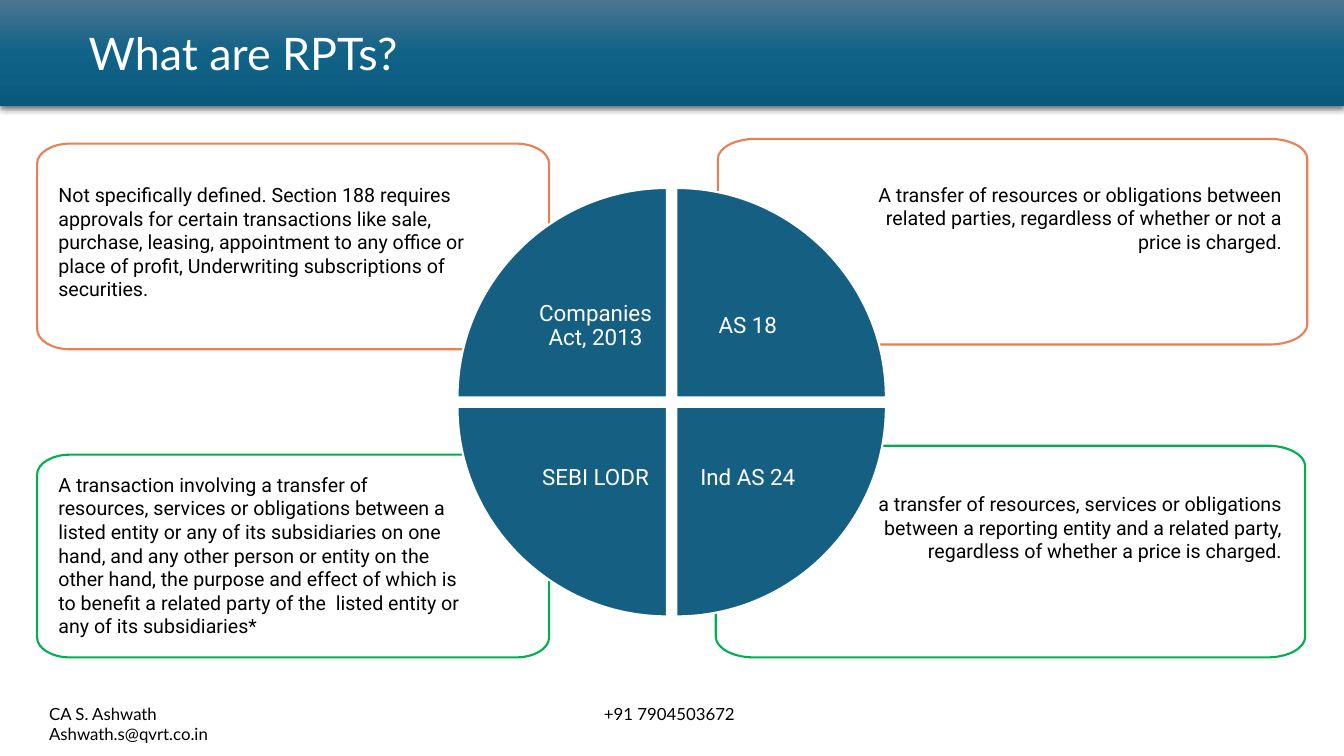
from copy import deepcopy
from math import cos, radians, sin

from lxml.etree import SubElement
from pptx import Presentation
from pptx.dml.color import RGBColor
from pptx.enum.shapes import MSO_SHAPE
from pptx.enum.text import MSO_ANCHOR as Anchor, PP_ALIGN as Align
from pptx.oxml.ns import qn
from pptx.util import Pt

WHITE = RGBColor(0xFF, 0xFF, 0xFF)
BLACK = RGBColor(0x00, 0x00, 0x00)
BLUE = RGBColor(0x15, 0x60, 0x82)
ORANGE = RGBColor(0xE9, 0x7F, 0x54)
GREEN = RGBColor(0x00, 0xB0, 0x50)
HEADER_STOPS = [
    (0, RGBColor(0x4C, 0x75, 0x91)),
    (0.5, RGBColor(0x10, 0x62, 0x87)),
    (1, RGBColor(0x09, 0x59, 0x7D)),
]
ARC_PULL = 0.55  # control point distance of a quarter arc, in radii

prs = Presentation()
prs.slide_width, prs.slide_height = Pt(960), Pt(540)
slide = prs.slides.add_slide(prs.slide_layouts[6])
shapes = slide.shapes


def write(shape, text, size=14, font="Roboto", color=BLACK, align=Align.LEFT,
          anchor=Anchor.TOP, insets=(7.2, 3.6, 7.2, 3.6), spacing=1.0):
    """Fill a shape with one paragraph per line; insets run left, top, right, bottom."""
    frame = shape.text_frame
    frame.word_wrap = True
    frame.vertical_anchor = anchor
    (frame.margin_left, frame.margin_top,
     frame.margin_right, frame.margin_bottom) = map(Pt, insets)
    frame.text = text
    for paragraph in frame.paragraphs:
        paragraph.alignment = align
        paragraph.line_spacing = spacing
        style = paragraph.runs[0].font
        style.size, style.name, style.color.rgb = Pt(size), font, color
    return frame


def draw_outline(arcs, fill, line, tip=None):
    """Join clockwise quarter arcs (centre x, y, radius x, y, start angle), then a tip."""
    points = []
    for x, y, rx, ry, start in arcs:
        c, s = cos(radians(start)), sin(radians(start))
        for u, v in [(c, s), (c - ARC_PULL * s, s + ARC_PULL * c),
                     (ARC_PULL * c - s, ARC_PULL * s + c), (-s, c)]:
            points.append((Pt(x + rx * u), Pt(y + ry * v)))
    if tip:
        points.append((Pt(tip[0]), Pt(tip[1])))
    builder = shapes.build_freeform(*points[0])
    builder.add_line_segments(points[1:], close=True)
    outline = builder.convert_to_shape()
    # The last three points of each arc become one Bezier segment.
    steps = list(outline._element.spPr.find(".//" + qn("a:pathLst"))[0])
    for first in range(1, 4 * len(arcs), 4):
        curve = steps[first].makeelement(qn("a:cubicBezTo"))
        steps[first].addprevious(curve)
        for step in steps[first:first + 3]:
            curve.append(step[0])
            step.getparent().remove(step)
    outline.shadow.inherit = False
    outline.fill.solid()
    outline.fill.fore_color.rgb = fill
    outline.line.color.rgb = line
    outline.line.width = Pt(1.5)
    return outline


# Header band
header = shapes.add_shape(MSO_SHAPE.RECTANGLE, 0, 0, Pt(960), Pt(75.6))
header.line.fill.background()
header.fill.gradient()
header.fill.gradient_angle = 270
stop_list = header._element.spPr.find(".//" + qn("a:gsLst"))
stop_list.append(deepcopy(stop_list[0]))
for stop, (position, color) in zip(header.fill.gradient_stops, HEADER_STOPS):
    stop.position, stop.color.rgb = position, color
header.shadow.inherit = False
shadow = SubElement(header._element.spPr.find(qn("a:effectLst")), qn("a:outerShdw"),
                    blurRad=str(Pt(4.5)), dist=str(Pt(1.5)), dir="5400000",
                    algn="t", rotWithShape="0")
shadow_color = SubElement(shadow, qn("a:srgbClr"), val="000000")
SubElement(shadow_color, qn("a:alpha"), val="63000")
title = write(header, "What are RPTs?", size=32, font="Lato", color=WHITE,
              align=Align.JUSTIFY, anchor=Anchor.MIDDLE)
title_format = title.paragraphs[0]._p.get_or_add_pPr()
title_format.set("marL", str(Pt(56.2)))
title_format.set("indent", "0")

# Contact line
contact = shapes.add_textbox(Pt(28), Pt(499), Pt(904), Pt(21.8))
contact_text = write(contact, "CA S. Ashwath\t+91 7904503672\nAshwath.s@qvrt.co.in",
                     size=12, font="Lato")
tab_stops = SubElement(contact_text.paragraphs[0]._p.get_or_add_pPr(), qn("a:tabLst"))
SubElement(tab_stops, qn("a:tab"), pos=str(Pt(396.3)), algn="l")

# Definition frames
for left, top, width, height, color in [
    (511.3, 318.4, 421, 151.2, GREEN),
    (26.5, 324.8, 365.7, 144.8, GREEN),
    (512.8, 99.2, 421, 146.9, ORANGE),
    (26.5, 102.6, 365.7, 146.9, ORANGE),
]:
    rx, ry = width * 0.064, height * 0.098
    west, east = left + rx, left + width - rx
    north, south = top + ry, top + height - ry
    frame = draw_outline([(west, north, rx, ry, 180), (east, north, rx, ry, 270),
                          (east, south, rx, ry, 0), (west, south, rx, ry, 90)],
                         WHITE, color)
    frame_color = frame._element.spPr.find(qn("a:solidFill"))[0]
    SubElement(frame_color, qn("a:alpha"), val="90000")

# Wheel of four quarters, clockwise from the upper left
CENTER_X, CENTER_Y, HALF_GAP, RADIUS = 479.8, 287.3, 3.4, 149.6
for label, side_x, side_y, start in [
    ("Companies Act, 2013", -1, -1, 180),
    ("AS 18", 1, -1, 270),
    ("Ind AS 24", 1, 1, 0),
    ("SEBI LODR", -1, 1, 90),
]:
    hub = CENTER_X + side_x * HALF_GAP, CENTER_Y + side_y * HALF_GAP
    quarter = draw_outline([(*hub, RADIUS, RADIUS, start)], BLUE, WHITE, tip=hub)
    inset_left, inset_right = (57.6, 10) if side_x < 0 else (10, 57.6)
    inset_top, inset_bottom = (57.6, 10) if side_y < 0 else (10, 57.6)
    write(quarter, label, size=16, color=WHITE, align=Align.CENTER,
          anchor=Anchor.MIDDLE, spacing=0.9,
          insets=(inset_left, inset_top, inset_right, inset_bottom))

# Definitions
for left, top, height, align, definition in [
    (34.6, 127.1, 92, Align.LEFT,
     "Not specifically defined. Section 188 requires approvals for certain "
     "transactions like sale, purchase, leasing, appointment to any office or place "
     "of profit, Underwriting subscriptions of securities."),
    (614.6, 127, 58, Align.RIGHT,
     "A transfer of resources or obligations between related parties, regardless of "
     "whether or not a price is charged."),
    (34.6, 334.2, 126, Align.LEFT,
     "A transaction involving a transfer of\n"
     "resources, services or obligations between a listed entity or any of its "
     "subsidiaries on one hand, and any other person or entity on the other hand, "
     "the purpose and effect of which is to benefit a related party of the  listed "
     "entity or any of its subsidiaries*"),
    (614.6, 348, 58, Align.RIGHT,
     "a transfer of resources, services or obligations between a reporting entity "
     "and a related party, regardless of whether a price is charged."),
]:
    box = shapes.add_textbox(Pt(left), Pt(top), Pt(308.2), Pt(height))
    write(box, definition, align=align)

prs.save("out.pptx")
